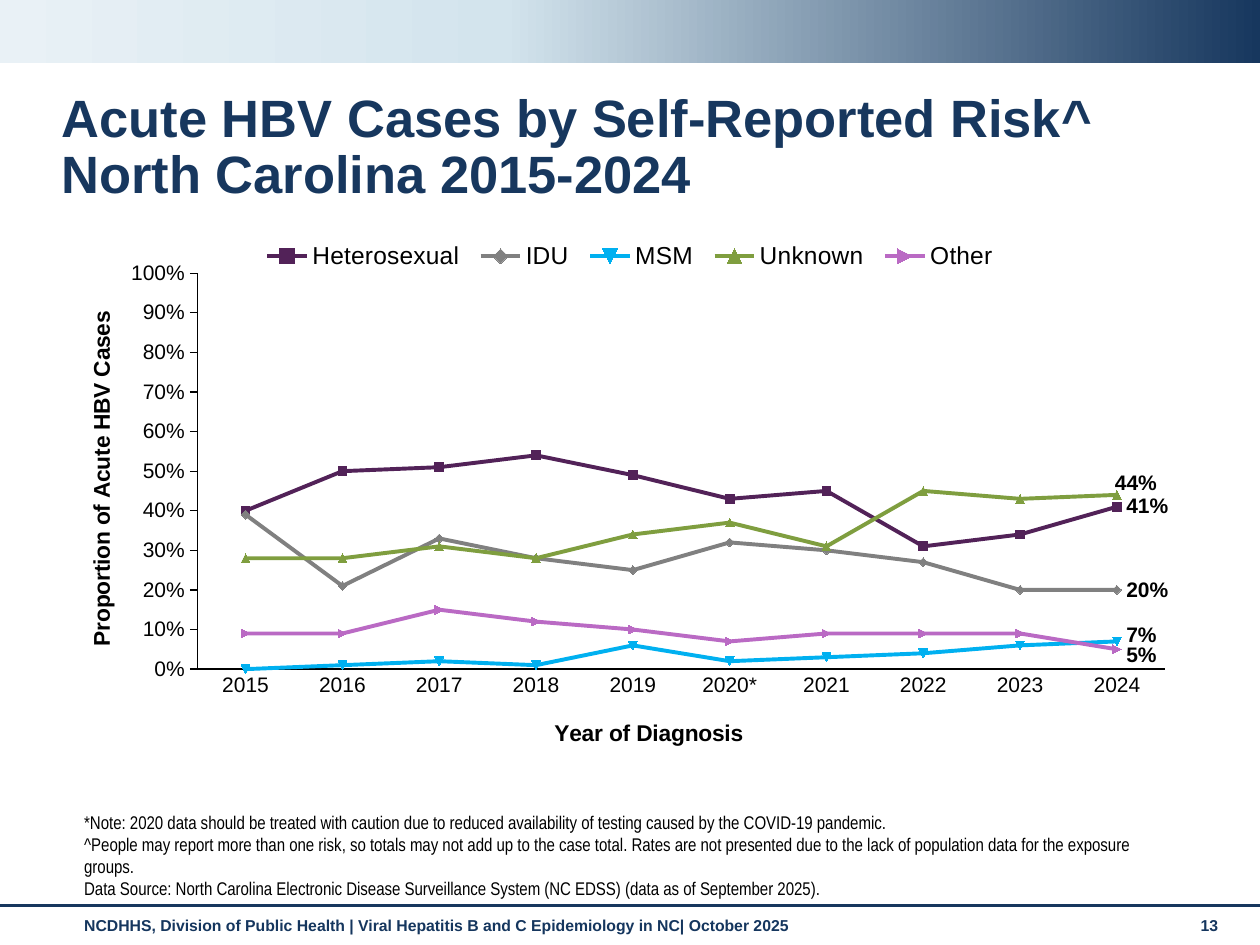
from copy import deepcopy
from dataclasses import dataclass

from pptx import Presentation
from pptx.chart.data import CategoryChartData
from pptx.dml.color import RGBColor
from pptx.enum.chart import XL_CHART_TYPE, XL_LABEL_POSITION, XL_LEGEND_POSITION, XL_TICK_MARK
from pptx.enum.shapes import MSO_CONNECTOR, MSO_SHAPE
from pptx.enum.text import MSO_ANCHOR
from pptx.oxml import parse_xml
from pptx.oxml.ns import nsdecls, qn
from pptx.util import Inches, Pt

NAVY = RGBColor(0x17, 0x37, 0x5E)
FOOTER_NAVY = RGBColor(0x15, 0x36, 0x5E)
PALE_BLUE = RGBColor(0xD3, 0xE4, 0xED)
ICE = RGBColor(0xE9, 0xF1, 0xF6)
BLACK = RGBColor(0, 0, 0)
PURPLE = RGBColor(0x52, 0x22, 0x58)
GRAY = RGBColor(0x80, 0x80, 0x80)
SKY = RGBColor(0x00, 0xB0, 0xF0)
OLIVE = RGBColor(0x7F, 0x9E, 0x3F)
ORCHID = RGBColor(0xBA, 0x6A, 0xC4)

YEARS = ["2015", "2016", "2017", "2018", "2019", "2020*", "2021", "2022", "2023", "2024"]


@dataclass(frozen=True)
class Risk:
    name: str
    color: RGBColor
    shares: tuple[float, ...]
    label_shift: tuple[float, float] | None = None


@dataclass(frozen=True)
class TextBlock:
    box: tuple[float, float, float, float]
    paragraphs: tuple[str, ...]
    size: float
    color: RGBColor
    font: str = "Arial"
    bold: bool = True
    anchor: MSO_ANCHOR = MSO_ANCHOR.TOP
    line_spacing: float = 1.0


RISKS = (
    Risk("Heterosexual", PURPLE, (0.4, 0.5, 0.51, 0.54, 0.49, 0.43, 0.45, 0.31, 0.34, 0.41)),
    Risk("IDU", GRAY, (0.39, 0.21, 0.33, 0.28, 0.25, 0.32, 0.3, 0.27, 0.2, 0.2)),
    Risk("MSM", SKY, (0, 0.01, 0.02, 0.01, 0.06, 0.02, 0.03, 0.04, 0.06, 0.07), (0, -0.01)),
    Risk("Unknown", OLIVE, (0.28, 0.28, 0.31, 0.28, 0.34, 0.37, 0.31, 0.45, 0.43, 0.44), (-0.01, -0.02)),
    Risk("Other", ORCHID, (0.09, 0.09, 0.15, 0.12, 0.1, 0.07, 0.09, 0.09, 0.09, 0.05), (0, 0.01)),
)

TEXTS = (
    TextBlock((0.39, 0.68, 9.61, 0.6),
              ("Acute HBV Cases by Self-Reported Risk^\vNorth Carolina 2015-2024",),
              30, NAVY, line_spacing=0.9),
    TextBlock((0.57, 6.83, 8.74, 0.36),
              ("*Note: 2020 data should be treated with caution due to reduced availability of testing "
               "caused by the COVID-19 pandemic.",
               "^People may report more than one risk, so totals may not add up to the case total. Rates "
               "are not presented due to the lack of population data for the exposure groups.",
               "Data Source: North Carolina Electronic Disease Surveillance System (NC EDSS) "
               "(data as of September 2025)."),
              10.5, BLACK, "Arial Narrow", False, MSO_ANCHOR.BOTTOM),
    TextBlock((0.57, 7.22, 8.74, 0.29),
              ("NCDHHS, Division of Public Health | Viral Hepatitis B and C Epidemiology in NC| October 2025",),
              9, FOOTER_NAVY),
    TextBlock((9.43, 7.22, 0.44, 0.3), ("13",), 9, FOOTER_NAVY),
)


def style_font(font, size: float, color: RGBColor, bold: bool = False, name: str = "Arial") -> None:
    font.name, font.size, font.bold = name, Pt(size), bold
    font.color.rgb = color


def add_text(slide, block: TextBlock) -> None:
    frame = slide.shapes.add_textbox(*map(Inches, block.box)).text_frame
    frame.word_wrap = True
    frame.vertical_anchor = block.anchor
    frame.text = "\n".join(block.paragraphs)
    for paragraph in frame.paragraphs:
        paragraph.line_spacing = block.line_spacing
        for run in paragraph.runs:
            style_font(run.font, block.size, block.color, block.bold, block.font)


def add_banner(slide) -> None:
    banner = slide.shapes.add_shape(MSO_SHAPE.RECTANGLE, 0, 0, Inches(10), Inches(0.5))
    banner.shadow.inherit = False
    banner.line.fill.background()
    banner.fill.gradient()
    banner.fill.gradient_angle = 180
    stop_list = banner._element.spPr.find(".//" + qn("a:gsLst"))
    stop_list.append(deepcopy(stop_list[-1]))
    for stop, position, color in zip(banner.fill.gradient_stops, (0, 0.6, 1), (NAVY, PALE_BLUE, ICE)):
        stop.position = position
        stop.color.rgb = color


def add_footer_rule(slide) -> None:
    rule = slide.shapes.add_connector(MSO_CONNECTOR.STRAIGHT, 0, Inches(7.19), Inches(10), Inches(7.19))
    rule.line.color.rgb = NAVY
    rule.line.width = Pt(1.75)
    rule._element.spPr.append(parse_xml(f"<a:effectLst {nsdecls('a')}/>"))


def set_layout(element, index: int, fractions: dict[str, float], edge: bool = True) -> None:
    for old in element.findall(qn("c:layout")):
        element.remove(old)
    inner = '<c:layoutTarget val="inner"/>' if element.tag == qn("c:plotArea") else ""
    modes = '<c:xMode val="edge"/><c:yMode val="edge"/>' if edge else ""
    values = "".join(f'<c:{key} val="{value}"/>' for key, value in fractions.items())
    element.insert(index, parse_xml(
        f"<c:layout {nsdecls('c')}><c:manualLayout>{inner}{modes}{values}</c:manualLayout></c:layout>"))


def style_axis(axis, title: str, tick: XL_TICK_MARK, left: float, top: float) -> None:
    axis.has_major_gridlines = False
    axis.major_tick_mark = tick
    axis.minor_tick_mark = XL_TICK_MARK.NONE
    axis.format.line.color.rgb = BLACK
    axis.format.line.width = Pt(0.75)
    style_font(axis.tick_labels.font, 12, BLACK)
    axis.axis_title.text_frame.text = title
    style_font(axis.axis_title.text_frame.paragraphs[0].runs[0].font, 13, BLACK, True)
    set_layout(axis.axis_title._element, 1, {"x": left, "y": top})


def style_series(series, risk: Risk) -> None:
    series.smooth = False
    series.marker.style = None
    series.format.line.color.rgb = risk.color
    series.format.line.width = Pt(2.25)
    label = series.points[len(YEARS) - 1].data_label
    style_font(label.font, 12, BLACK, True)
    label.position = XL_LABEL_POSITION.RIGHT
    if risk.label_shift:
        shift = dict(zip("xy", risk.label_shift))
        set_layout(label._dLbl, 1, shift, edge=False)


def add_risk_chart(slide) -> None:
    data = CategoryChartData(number_format="0%")
    data.categories = YEARS
    for risk in RISKS:
        data.add_series(risk.name, risk.shares)
    chart = slide.shapes.add_chart(
        XL_CHART_TYPE.LINE, *map(Inches, (0.39, 1.63, 9.04, 4.49)), data).chart
    chart.has_title = False
    style_font(chart.font, 10, BLACK)
    chart.plots[0].vary_by_categories = False
    chart.has_legend = True
    chart.legend.position = XL_LEGEND_POSITION.TOP
    chart.legend.include_in_layout = False
    style_font(chart.legend.font, 14, BLACK)
    set_layout(chart.legend._element, 1, {"x": 0.18, "y": 0.05, "w": 0.66, "h": 0.08})
    set_layout(chart._chartSpace.chart.plotArea, 0, {"x": 0.13, "y": 0.12, "w": 0.85, "h": 0.7})
    shares = chart.value_axis
    shares.minimum_scale, shares.maximum_scale, shares.major_unit = 0, 1, 0.1
    shares.tick_labels.number_format = "0%"
    shares.tick_labels.number_format_is_linked = False
    style_axis(shares, "Proportion of Acute HBV Cases", XL_TICK_MARK.OUTSIDE, 0.03, 0.18)
    style_axis(chart.category_axis, "Year of Diagnosis", XL_TICK_MARK.NONE, 0.44, 0.9)
    for series, risk in zip(chart.plots[0].series, RISKS):
        style_series(series, risk)


def main() -> None:
    """Build the slide on acute HBV cases by self-reported risk."""
    deck = Presentation()
    deck.slide_width, deck.slide_height = Inches(10), Inches(7.5)
    slide = deck.slides.add_slide(deck.slide_layouts[6])
    add_banner(slide)
    add_footer_rule(slide)
    for block in TEXTS:
        add_text(slide, block)
    add_risk_chart(slide)
    deck.save("out.pptx")


if __name__ == "__main__":
    main()
